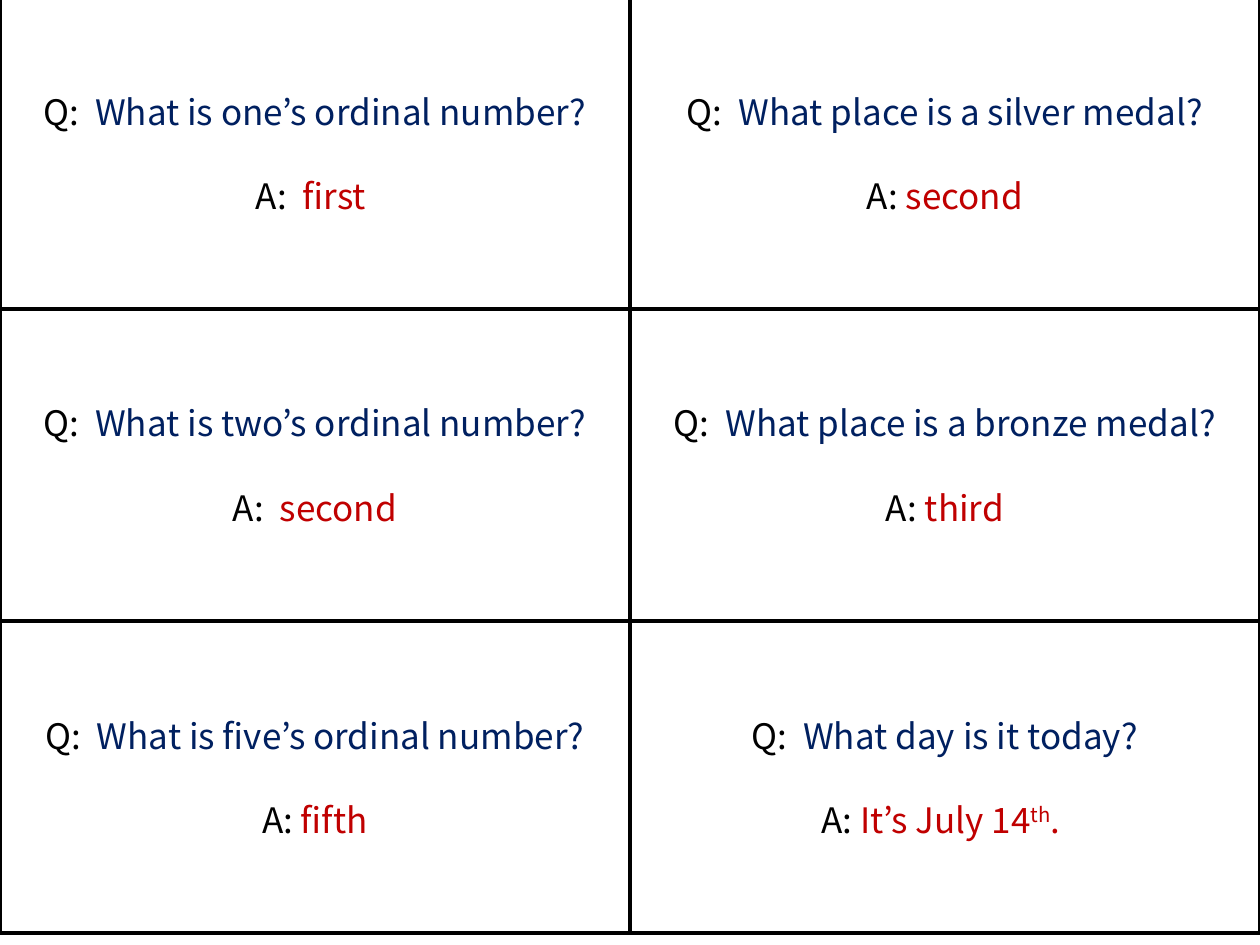
from dataclasses import dataclass

from pptx import Presentation
from pptx.dml.color import RGBColor
from pptx.enum.shapes import MSO_SHAPE as Shape
from pptx.enum.text import MSO_ANCHOR as Anchor, PP_ALIGN as Align
from pptx.util import Emu, Pt

PX = 914400 / 126
SLIDE_WIDTH, SLIDE_HEIGHT = 1260, 945
CARD_WIDTH, CARD_HEIGHT = 630, 312
GRID_TOP = -3

# Columns of cards, each read downwards: question, answer label, answer, superscript, ending
CARD_COLUMNS = [
    [
        ("What is one’s ordinal number?", "A:  ", "first ", "", ""),
        ("What is two’s ordinal number?", "A:  ", "second", "", ""),
        ("What is five’s ordinal number?", "A: ", "fifth", "", ""),
    ],
    [
        ("What place is a silver medal?", "A: ", "second", "", ""),
        ("What place is a bronze medal?", "A: ", "third", "", ""),
        ("What day is it today?", "A: ", "It’s July 14", "th", ". "),
    ],
]


@dataclass(frozen=True)
class Theme:
    font: str = "Noto Sans CJK KR"
    text_size: int = 20
    line_pitch: int = 24
    border_width: int = 2
    paper: str = "FFFFFF"
    ink: str = "000000"
    question: str = "002060"
    answer: str = "C00000"


def px(length):
    return Emu(round(length * PX))


def rgb(color):
    return RGBColor.from_string(color)


class CardSheet:
    def __init__(self, slide, theme):
        self.slide = slide
        self.theme = theme

    def card(self, left, top, question, label, answer, superscript, ending):
        theme = self.theme
        shape = self.slide.shapes.add_shape(
            Shape.RECTANGLE, px(left), px(top), px(CARD_WIDTH), px(CARD_HEIGHT))
        shape.shadow.inherit = False
        shape.fill.solid()
        shape.fill.fore_color.rgb = rgb(theme.paper)
        shape.line.color.rgb = rgb(theme.ink)
        shape.line.width = Pt(theme.border_width)

        frame = shape.text_frame
        frame.word_wrap = True
        frame.vertical_anchor = Anchor.MIDDLE
        self.line(frame.paragraphs[0], "Q:  ", [question], theme.question)
        answer_paragraph = frame.add_paragraph()
        answer_paragraph.space_before = Pt(theme.line_pitch)
        self.line(answer_paragraph, label, [answer, superscript, ending], theme.answer)

    def line(self, paragraph, label, parts, color):
        """Write a label, then parts in one colour; the second part is raised."""
        theme = self.theme
        paragraph.alignment = Align.CENTER
        paragraph.line_spacing = Pt(theme.line_pitch)
        paragraph.font.name = theme.font
        paragraph.font.size = Pt(theme.text_size)
        self.run(paragraph, label, theme.ink)
        for index, text in enumerate(parts):
            if text:
                self.run(paragraph, text, color, raised=index == 1)

    def run(self, paragraph, text, color, raised=False):
        run = paragraph.add_run()
        run.text = text
        run.font.color.rgb = rgb(color)
        if raised:
            run._r.get_or_add_rPr().set("baseline", "30000")


def main():
    presentation = Presentation()
    presentation.slide_width = px(SLIDE_WIDTH)
    presentation.slide_height = px(SLIDE_HEIGHT)
    slide = presentation.slides.add_slide(presentation.slide_layouts[6])
    sheet = CardSheet(slide, Theme())
    for column, cards in enumerate(CARD_COLUMNS):
        for row, content in enumerate(cards):
            sheet.card(column * CARD_WIDTH, GRID_TOP + row * CARD_HEIGHT, *content)
    presentation.save("out.pptx")


if __name__ == "__main__":
    main()
